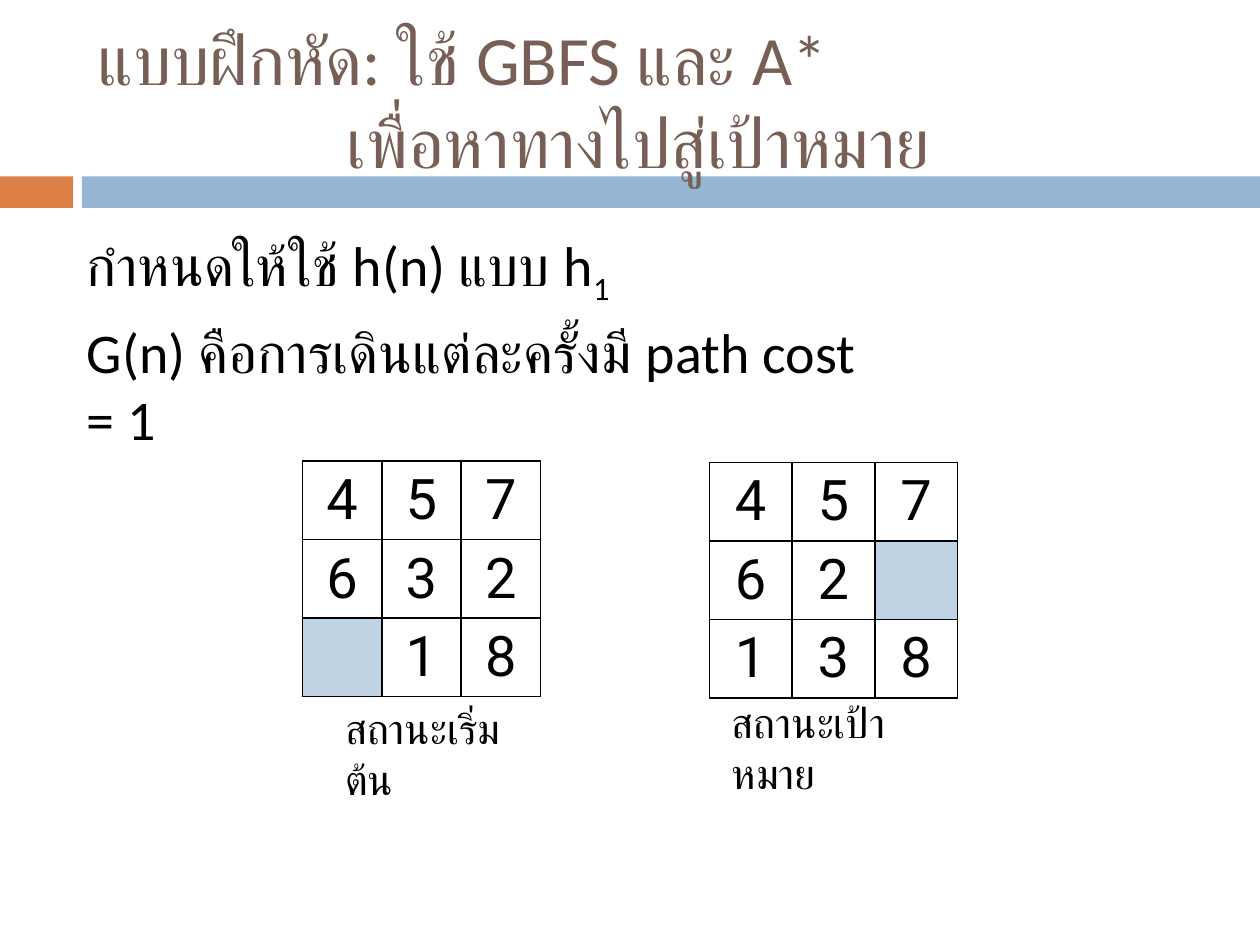
from pptx import Presentation
from pptx import util as u
from pptx.dml.color import RGBColor
from pptx.enum import text
from pptx.enum.shapes import MSO_SHAPE
from pptx.oxml import parse_xml
from pptx.oxml.ns import nsdecls

BLACK = RGBColor(0x00, 0x00, 0x00)
WHITE = RGBColor(0xFF, 0xFF, 0xFF)
BROWN = RGBColor(0x77, 0x5F, 0x55)
ORANGE = RGBColor(0xDD, 0x80, 0x47)
BLUE = RGBColor(0x94, 0xB6, 0xD2)
PALE_BLUE = RGBColor(0xBF, 0xD3, 0xE4)
UNIT = u.Inches(0.1)
START = ["457", "632", " 18"]
GOAL = ["457", "62 ", "138"]


def grid(*cells):
    """Turn counts of grid columns and rows into lengths."""
    return [round(cell * UNIT) for cell in cells]


def place(shape, box):
    """Move a shape to a box of left, top, width and height."""
    shape.left, shape.top, shape.width, shape.height = grid(*box)


def style(para, size, color, name="Calibri"):
    """Set the font of a paragraph."""
    para.font.size = u.Pt(size)
    para.font.name = name
    para.font.color.rgb = color


def add_band(page, box, gap_start, gap_end):
    """Draw the two-coloured band behind the other parts."""
    left, top, width, height = box
    parts = [(left, gap_start, ORANGE), (gap_end, width - gap_end, BLUE)]
    for start, length, color in parts:
        bar = page.shapes.add_shape(MSO_SHAPE.RECTANGLE, *grid(start, top, length, height))
        bar.shadow.inherit = False
        bar.fill.solid()
        bar.fill.fore_color.rgb = color
        bar.line.fill.background()
        page.shapes._spTree.insert(2, bar._element)


def fill_title(page, box, lines, indent):
    """Fill the title with two lines, the second one indented."""
    title = page.shapes.title
    place(title, box)
    frame = title.text_frame
    frame.text = "\n".join(lines)
    frame.auto_size = text.MSO_AUTO_SIZE.NONE
    frame.vertical_anchor = text.MSO_ANCHOR.MIDDLE
    for para in frame.paragraphs:
        para.alignment = text.PP_ALIGN.LEFT
        style(para, 39.6, BROWN)
    frame.paragraphs[-1]._p.get_or_add_pPr().set("marL", str(grid(indent)[0]))


def fill_body(page, box):
    """Fill the body with the conditions of the exercise."""
    body = page.placeholders[1]
    place(body, box)
    frame = body.text_frame
    frame.text = "กำหนดให้ใช้ h(n) แบบ h\nG(n) คือการเดินแต่ละครั้งมี path cost = 1"
    frame.auto_size = text.MSO_AUTO_SIZE.NONE
    for para in frame.paragraphs:
        style(para, 32, BLACK)
        para.space_before = u.Pt(0)
        para.space_after = u.Pt(6)
        props = para._p.get_or_add_pPr()
        props.set("marL", "0")
        props.set("indent", "0")
        props.append(parse_xml(f'<a:buNone {nsdecls("a")}/>'))
    span = frame.paragraphs[0].add_run()
    span.text = "1"
    span.font._element.set("baseline", "-25000")


def add_borders(cell):
    """Give a cell thin black borders."""
    props = cell._tc.get_or_add_tcPr()
    for index, side in enumerate(("lnL", "lnR", "lnT", "lnB")):
        props.insert(index, parse_xml(
            f'<a:{side} {nsdecls("a")} w="12700"><a:solidFill>'
            f'<a:srgbClr val="{BLACK}"/></a:solidFill></a:{side}>'))


def add_puzzle(page, box, state):
    """Draw a puzzle state as a table with one coloured empty cell."""
    size = len(state)
    table = page.shapes.add_table(size, size, *grid(*box)).table
    table.first_row = table.horz_banding = False
    for row, tiles in enumerate(state):
        for column, tile in enumerate(tiles):
            cell = table.cell(row, column)
            cell.text = tile.strip()
            cell.fill.solid()
            cell.fill.fore_color.rgb = WHITE if cell.text else PALE_BLUE
            para = cell.text_frame.paragraphs[0]
            para.alignment = text.PP_ALIGN.CENTER
            style(para, 32, BLACK, "Roboto")
            add_borders(cell)


def add_caption(page, box, words):
    """Write the name of a puzzle state."""
    frame = page.shapes.add_textbox(*grid(*box)).text_frame
    frame.word_wrap = True
    frame.text = words
    style(frame.paragraphs[0], 24, BLACK)


def main():
    """Build and save the exercise slide."""
    deck = Presentation()
    deck.slide_width, deck.slide_height = grid(100, 75)
    page = deck.slides.add_slide(deck.slide_layouts[1])
    add_band(page, (0, 14, 100, 2.5), 5.8, 6.5)
    fill_title(page, (6.7, 2.5, 89.2, 10.8),
               ["แบบฝึกหัด: ใช้ GBFS และ A*", "เพื่อหาทางไปสู่เป้าหมาย"], 19.8)
    fill_body(page, (5.9, 17.8, 63.8, 17.8))
    add_puzzle(page, (24, 36.6, 18.9, 18.7), START)
    add_puzzle(page, (56.3, 36.7, 19.7, 18.7), GOAL)
    add_caption(page, (26.4, 55.3, 16.5, 5), "สถานะเริ่มต้น")
    add_caption(page, (57.1, 54.8, 20.5, 5.1), "สถานะเป้าหมาย")
    deck.save("out.pptx")


if __name__ == "__main__":
    main()
